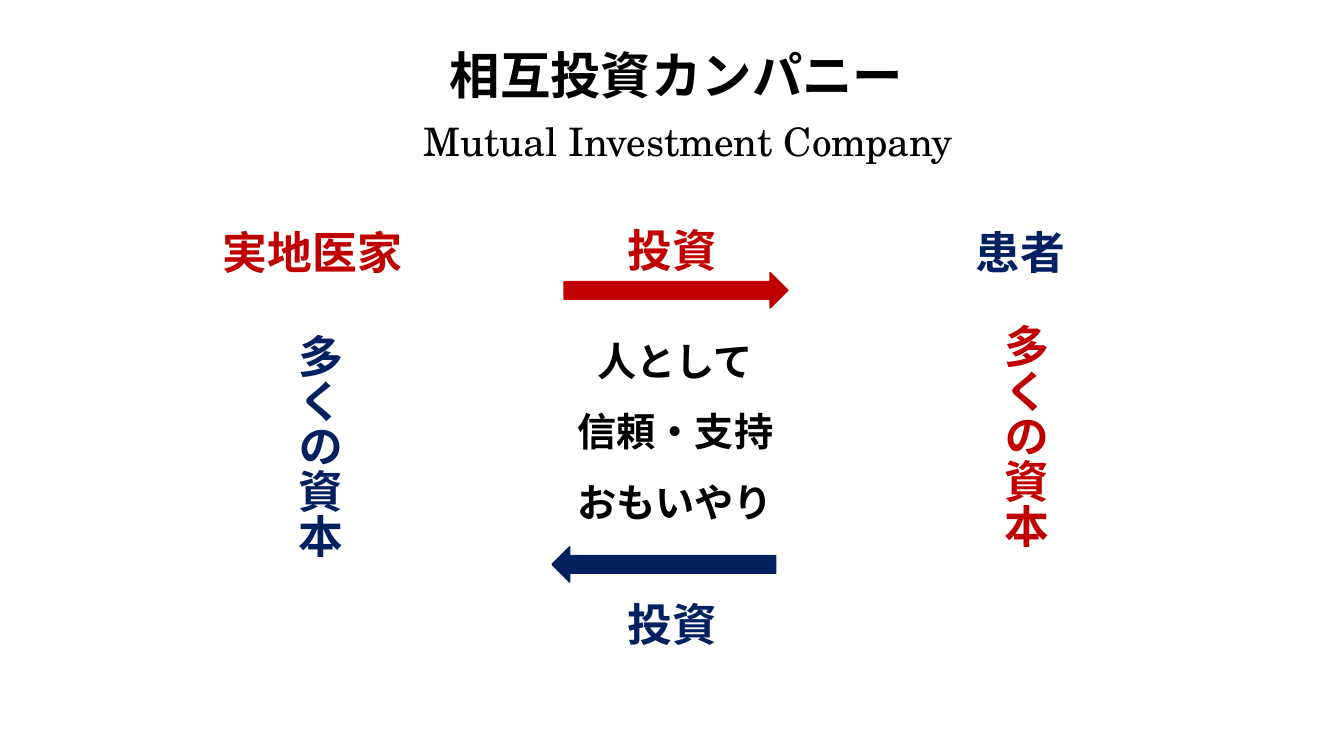
from lxml import etree
from pptx import Presentation
from pptx.dml.color import RGBColor
from pptx.enum.shapes import MSO_SHAPE
from pptx.enum.text import MSO_ANCHOR, MSO_AUTO_SIZE, PP_ALIGN
from pptx.oxml.ns import qn
from pptx.util import Inches, Pt

LEFT, CENTER = PP_ALIGN.LEFT, PP_ALIGN.CENTER
TOP = MSO_ANCHOR.TOP
GROW = MSO_AUTO_SIZE.SHAPE_TO_FIT_TEXT
RIGHT_ARROW, LEFT_ARROW = MSO_SHAPE.RIGHT_ARROW, MSO_SHAPE.LEFT_ARROW

WIDTH, HEIGHT = Inches(13.33), Inches(7.5)
SANS, SERIF = "Noto Sans CJK JP", "TeX Gyre Schola"
BLACK, RED, NAVY = "000000", "C00000", "002060"
TITLE_ONLY = 5


def color(hex_code):
    return RGBColor.from_string(hex_code)


def area(x, y, w, h):
    """Turn percentages of the slide's width and height into lengths."""
    return (int(WIDTH * x / 100), int(HEIGHT * y / 100),
            int(WIDTH * w / 100), int(HEIGHT * h / 100))


def write(sp, lines, size, hex_code, font=SANS, bold=True, align=LEFT,
          spacing=1.0, wrap=True):
    tf = sp.text_frame
    tf.word_wrap, tf.auto_size, tf.vertical_anchor = wrap, GROW, TOP
    for i, line in enumerate(lines):
        p = tf.add_paragraph() if i else tf.paragraphs[0]
        p.alignment, p.line_spacing = align, spacing
        r = p.add_run()
        r.text = line
        r.font.name, r.font.size, r.font.bold = font, Pt(size), bold
        r.font.color.rgb = color(hex_code)
        latin = r.font._element.find(qn("a:latin"))
        ea = etree.Element(qn("a:ea"), typeface=font)
        latin.addnext(ea)


def add_title(slide, box, text):
    sp = slide.shapes.title
    sp.left, sp.top, sp.width, sp.height = area(*box)
    write(sp, [text], 36, BLACK)


def add_text(slide, box, lines, size, hex_code, **style):
    sp = slide.shapes.add_textbox(*area(*box))
    write(sp, lines, size, hex_code, **style)
    return sp


def add_vertical_text(slide, x, y, text, hex_code):
    sp = add_text(slide, (x, y, 5.55, 42.9), [text], 32, hex_code)
    sp.text_frame._txBody.find(qn("a:bodyPr")).set("vert", "eaVert")


def add_arrow(slide, kind, x, y, hex_code):
    sp = slide.shapes.add_shape(kind, *area(x, y, 16.65, 4.67))
    sp.shadow.inherit = False
    sp.fill.solid()
    sp.fill.fore_color.rgb = color(hex_code)
    sp.line.color.rgb = color(hex_code)
    sp.line.width = Pt(1)


def main():
    prs = Presentation()
    prs.slide_width, prs.slide_height = WIDTH, HEIGHT
    slide = prs.slides.add_slide(prs.slide_layouts[TITLE_ONLY])

    add_title(slide, (32.7, 5.2, 36.4, 9.5), "相互投資カンパニー")
    add_text(slide, (30.75, 14.93, 47.6, 7.6), ["Mutual Investment Company"],
             28, BLACK, font=SERIF, bold=False)

    for x, party, hex_code in ((15.83, "実地医家", RED), (71.87, "患者", NAVY)):
        add_text(slide, (x, 29.07, 16.9, 8.5), [party], 32, hex_code)
    for x, y, hex_code in ((20.56, 42.93, NAVY), (73.14, 41.6, RED)):
        add_vertical_text(slide, x, y, "多くの資本", hex_code)

    add_text(slide, (38.4, 40.8, 23.7, 28.67),
             ["人として", "信頼・支持", "おもいやり"],
             28, BLACK, align=CENTER, spacing=1.5)

    for kind, x, y, label_y, hex_code in (
            (RIGHT_ARROW, 41.97, 36.07, 25.2, RED),
            (LEFT_ARROW, 41.07, 72.33, 74.67, NAVY)):
        add_arrow(slide, kind, x, y, hex_code)
        add_text(slide, (45.9, label_y, 8.25, 11.07), ["投資"], 32, hex_code,
                 align=CENTER, spacing=1.5, wrap=False)

    prs.save("out.pptx")


if __name__ == "__main__":
    main()
